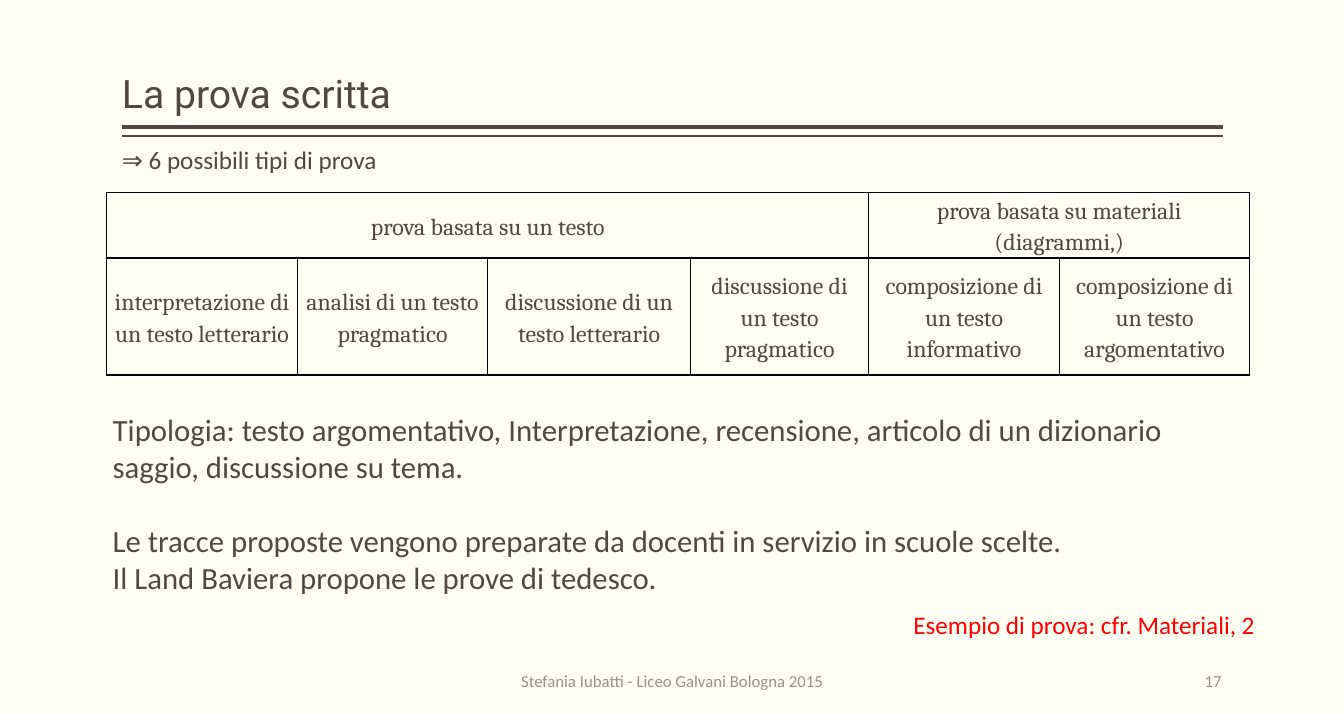
from pptx import Presentation
from pptx.dml.color import RGBColor
from pptx.enum.shapes import MSO_CONNECTOR
from pptx.enum.text import MSO_ANCHOR, PP_ALIGN
from pptx.oxml.ns import qn
from pptx.util import Cm, Inches, Pt
from lxml.etree import SubElement, Element

# Content
IVORY = RGBColor(0xFF, 0xFF, 0xF3)
BROWN = RGBColor(0x51, 0x48, 0x43)
TAUPE = RGBColor(0x9D, 0x8F, 0x88)
RED = RGBColor(0xFF, 0x00, 0x00)
BORDER_HEX = "000000"

SLIDE_WIDTH = Inches(40 / 3)
SLIDE_HEIGHT = Cm(18)

TITLE_RULES = [(1.26, 3), (1.35, 1)]  # height on the slide, line width
RULE_LEFT, RULE_RIGHT = 1.21, 12.13

BODY_LINES = [
    "Tipologia: testo argomentativo, Interpretazione, recensione, articolo di un dizionario "
    "saggio, discussione su tema.",
    "Le tracce proposte vengono preparate da docenti in servizio in scuole scelte.",
    "Il Land Baviera propone le prove di tedesco.",
]
LEFT, CENTER, RIGHT = PP_ALIGN.LEFT, PP_ALIGN.CENTER, PP_ALIGN.RIGHT
TOP, MIDDLE, BOTTOM = MSO_ANCHOR.TOP, MSO_ANCHOR.MIDDLE, MSO_ANCHOR.BOTTOM

# Lines, place, size, font, colour, alignment, anchor, side margin
TEXTS = [
    (["La prova scritta"], (1.21, 0.08, 10.92, 1.13), 28, "Roboto", BROWN, LEFT, BOTTOM, 0),
    (["⇒ 6 possibili tipi di prova"], (1.11, 1.38, 10.37, 0.4), 18, "Calibri", BROWN, LEFT, TOP, 0.1),
    (BODY_LINES, (1.02, 4.03, 11.28, 1.95), 22, "Calibri", BROWN, LEFT, TOP, 0.1),
    (["17"], (10.12, 6.57, 2, 0.38), 12, "Calibri", TAUPE, RIGHT, MIDDLE, 0),
    (["Stefania Iubatti - Liceo Galvani Bologna 2015"], (3.21, 6.57, 6.92, 0.38),
     12, "Calibri", TAUPE, CENTER, MIDDLE, 0),
    (["Esempio di prova: cfr. Materiali, 2"], (8.47, 6, 4.57, 0.4),
     18, "Calibri", RED, CENTER, TOP, 0.1),
]

TABLE_PLACE = (1.06, 1.91, 11.36, 1.81)
COLUMN_WIDTHS = [1.89, 1.89, 2.01, 1.77, 1.89, 1.89]
ROW_HEIGHTS = [0.65, 1.16]
GROUPS = [("prova basata su un testo", 4), ("prova basata su materiali (diagrammi,)", 2)]
EXAM_TYPES = [
    "interpretazione di un testo letterario",
    "analisi di un testo pragmatico",
    "discussione di un testo letterario",
    "discussione di un testo pragmatico",
    "composizione di un testo informativo",
    "composizione di un testo argomentativo",
]


def set_all(target, values):
    for name, value in values.items():
        setattr(target, name, value)


def write(para, text, size, font, color, align):
    span = para.add_run()
    span.text = text
    set_all(span.font, {"size": Pt(size), "name": font, "bold": False})
    span.font.color.rgb = color
    para.alignment = align


def add_text(page, lines, place, size, font, color, align, anchor, side):
    box = page.shapes.add_textbox(*map(Inches, place))
    frame = box.text_frame
    set_all(frame, {
        "word_wrap": True, "vertical_anchor": anchor,
        "margin_left": Inches(side), "margin_right": Inches(side),
        "margin_top": Inches(0.05), "margin_bottom": Inches(0.05),
    })
    for index, line in enumerate(lines):
        para = frame.paragraphs[0] if index == 0 else frame.add_paragraph()
        write(para, line, size, font, color, align)
    return frame


def add_borders(cell):
    properties = cell._tc.get_or_add_tcPr()
    for index, side in enumerate(("a:lnL", "a:lnR", "a:lnT", "a:lnB")):
        line = Element(qn(side), w=str(Pt(1)))
        fill = SubElement(line, qn("a:solidFill"))
        SubElement(fill, qn("a:srgbClr"), val=BORDER_HEX)
        properties.insert(index, line)


def fill_cell(cell, text):
    set_all(cell, {
        "vertical_anchor": MIDDLE, "margin_left": Inches(0.07),
        "margin_right": Inches(0.07), "margin_top": 0, "margin_bottom": 0,
    })
    para = cell.text_frame.paragraphs[0]
    write(para, text, 17, "Cambria", BROWN, CENTER)
    para.line_spacing = 1.15


def add_exam_table(page):
    table = page.shapes.add_table(
        len(ROW_HEIGHTS), len(COLUMN_WIDTHS), *map(Inches, TABLE_PLACE)).table
    set_all(table, {"first_row": False, "horz_banding": False})
    for column, width in zip(table.columns, COLUMN_WIDTHS):
        column.width = Inches(width)
    for row, height in zip(table.rows, ROW_HEIGHTS):
        row.height = Inches(height)
    for cell in table.iter_cells():
        cell.fill.background()
        add_borders(cell)
    start = 0
    for text, count in GROUPS:
        cell = table.cell(0, start)
        cell.merge(table.cell(0, start + count - 1))
        fill_cell(cell, text)
        start += count
    for index, text in enumerate(EXAM_TYPES):
        fill_cell(table.cell(1, index), text)


def main():
    deck = Presentation()
    set_all(deck, {"slide_width": SLIDE_WIDTH, "slide_height": SLIDE_HEIGHT})
    page = deck.slides.add_slide(deck.slide_layouts[6])
    page.background.fill.solid()
    page.background.fill.fore_color.rgb = IVORY

    # Double rule under the title
    for height, width in TITLE_RULES:
        rule = page.shapes.add_connector(
            MSO_CONNECTOR.STRAIGHT, Inches(RULE_LEFT), Inches(height),
            Inches(RULE_RIGHT), Inches(height))
        rule.line.width = Pt(width)
        rule.line.color.rgb = BROWN
        SubElement(rule._element.spPr, qn("a:effectLst"))

    # Texts, with the title's tight leading and the gap before the second body line
    frames = [add_text(page, *item) for item in TEXTS]
    frames[0].paragraphs[0].line_spacing = 0.9
    frames[2].paragraphs[1].space_before = Pt(26.5)

    # Table of exam types
    add_exam_table(page)
    deck.save("out.pptx")


if __name__ == "__main__":
    main()
